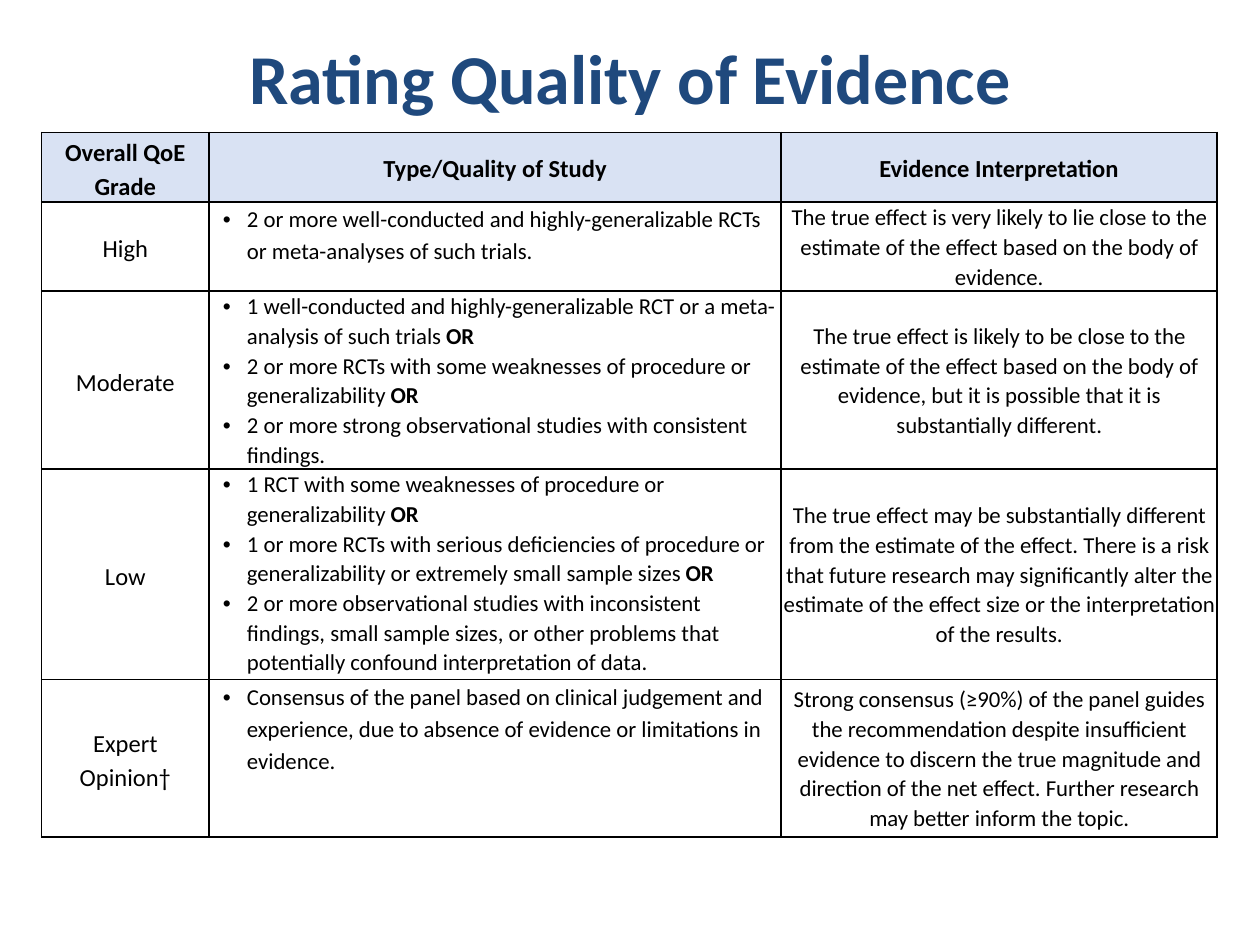
from lxml import etree
from pptx import Presentation
from pptx.dml.color import RGBColor
from pptx.enum.text import MSO_ANCHOR, PP_ALIGN
from pptx.oxml.ns import qn
from pptx.util import Inches, Pt

TOP, MIDDLE = MSO_ANCHOR.TOP, MSO_ANCHOR.MIDDLE
LEFT, CENTER = PP_ALIGN.LEFT, PP_ALIGN.CENTER
BLACK = RGBColor(0x00, 0x00, 0x00)
WHITE = RGBColor(0xFF, 0xFF, 0xFF)
NAVY = RGBColor(0x1F, 0x49, 0x7D)
PALE_BLUE = RGBColor(0xD9, 0xE2, 0xF3)

TITLE_ONLY = 5
COLUMN_WIDTHS = (1.33, 4.54, 3.46)
ROW_HEIGHTS = (0.52, 0.67, 1.35, 1.67, 1.25)
GRADE_MARGINS = (0.07, 0.01, 0.07, 0)
NO_MARGINS = (0, 0, 0, 0)
OR = "OR"

HEADINGS = ("Overall QoE Grade", "Type/Quality of Study", "Evidence Interpretation")
GRADES = (
    ("High",
     ["2 or more well-conducted and highly-generalizable RCTs or meta-analyses of such trials."],
     "The true effect is very likely to lie close to the estimate of the effect based on "
     "the body of evidence."),
    ("Moderate",
     ["1 well-conducted and highly-generalizable RCT or a meta-analysis of such trials OR",
      "2 or more RCTs with some weaknesses of procedure or generalizability OR",
      "2 or more strong observational studies with consistent findings."],
     "The true effect is likely to be close to the estimate of the effect based on the body "
     "of evidence, but it is possible that it is substantially different."),
    ("Low",
     ["1 RCT with some weaknesses of procedure or generalizability OR",
      "1 or more RCTs with serious deficiencies of procedure or generalizability or "
      "extremely small sample sizes OR",
      "2 or more observational studies with inconsistent findings, small sample sizes, or "
      "other problems that potentially confound interpretation of data."],
     "The true effect may be substantially different from the estimate of the effect. There "
     "is a risk that future research may significantly alter the estimate of the effect size "
     "or the interpretation of the results."),
    ("Expert Opinion†",
     ["Consensus of the panel based on clinical judgement and experience, due to absence of "
      "evidence or limitations in evidence."],
     "Strong consensus (≥90%) of the panel guides the recommendation despite insufficient "
     "evidence to discern the true magnitude and direction of the net effect. Further "
     "research may better inform the topic."),
)


class SlideBuilder:
    font_name = "Calibri"

    def __init__(self, slide):
        self.slide = slide

    def style(self, font, size, color=BLACK, bold=False):
        font.name = self.font_name
        font.size = Pt(size)
        font.bold = bold
        font.color.rgb = color

    def title(self, text):
        title = self.slide.shapes.title
        title.left, title.top = Inches(0.5), Inches(0.22)
        title.width, title.height = Inches(9), Inches(1.25)
        frame = title.text_frame
        frame.text = text
        frame.vertical_anchor = TOP
        para = frame.paragraphs[0]
        para.alignment = CENTER
        self.style(para.runs[0].font, 40, NAVY, True)

    def table(self, left, top):
        frame = self.slide.shapes.add_table(
            len(ROW_HEIGHTS), len(COLUMN_WIDTHS), Inches(left), Inches(top),
            Inches(sum(COLUMN_WIDTHS)), Inches(sum(ROW_HEIGHTS)))
        table = frame.table
        for column, width in zip(table.columns, COLUMN_WIDTHS):
            column.width = Inches(width)
        for row, height in zip(table.rows, ROW_HEIGHTS):
            row.height = Inches(height)
        return table

    def cell(self, cell, texts, size, spacing, margins=NO_MARGINS, fill=WHITE,
             bold=False, bulleted=False):
        cell.margin_left, cell.margin_top, cell.margin_right, cell.margin_bottom = (
            Inches(margin) for margin in margins)
        cell.vertical_anchor = TOP if bulleted else MIDDLE
        self.borders(cell)
        cell.fill.solid()
        cell.fill.fore_color.rgb = fill
        frame = cell.text_frame
        frame.text = "\n".join(texts)
        for para in frame.paragraphs:
            para.alignment = LEFT if bulleted else CENTER
            para.line_spacing = spacing
            if bulleted:
                self.bullet(para)
            self.style(para.runs[0].font, size, bold=bold)
            if para.text.endswith(OR):
                para.runs[0].text = para.text.removesuffix(OR)
                span = para.add_run()
                span.text = OR
                self.style(span.font, size, bold=True)

    def bullet(self, para):
        properties = para._p.get_or_add_pPr()
        properties.set("marL", str(Inches(0.3)))
        properties.set("indent", str(Inches(-0.19)))
        etree.SubElement(properties, qn("a:buFont"), typeface="Arial")
        etree.SubElement(properties, qn("a:buChar"), char="•")

    def borders(self, cell):
        """Draw a thin black line on all four sides; call before setting the fill."""
        properties = cell._tc.get_or_add_tcPr()
        for side in ("a:lnL", "a:lnR", "a:lnT", "a:lnB"):
            line = etree.SubElement(properties, qn(side), w=str(Pt(1)))
            solid = etree.SubElement(line, qn("a:solidFill"))
            etree.SubElement(solid, qn("a:srgbClr"), val=str(BLACK))


def main():
    deck = Presentation()
    deck.slide_width, deck.slide_height = Inches(10), Inches(7.5)
    page = SlideBuilder(deck.slides.add_slide(deck.slide_layouts[TITLE_ONLY]))
    page.title("Rating Quality of Evidence")

    table = page.table(0.33, 1.05)
    for column, heading in enumerate(HEADINGS):
        page.cell(table.cell(0, column), [heading], 14, 1.15, fill=PALE_BLUE, bold=True,
                  margins=NO_MARGINS if column else GRADE_MARGINS)
    for row, (grade, studies, interpretation) in enumerate(GRADES, start=1):
        study_spacing = 1.07 if len(studies) > 1 else 1.15
        page.cell(table.cell(row, 0), [grade], 14, 1.15, GRADE_MARGINS)
        page.cell(table.cell(row, 1), studies, 13, study_spacing, bulleted=True)
        page.cell(table.cell(row, 2), [interpretation], 13, 1.07)

    deck.save("out.pptx")


if __name__ == "__main__":
    main()
